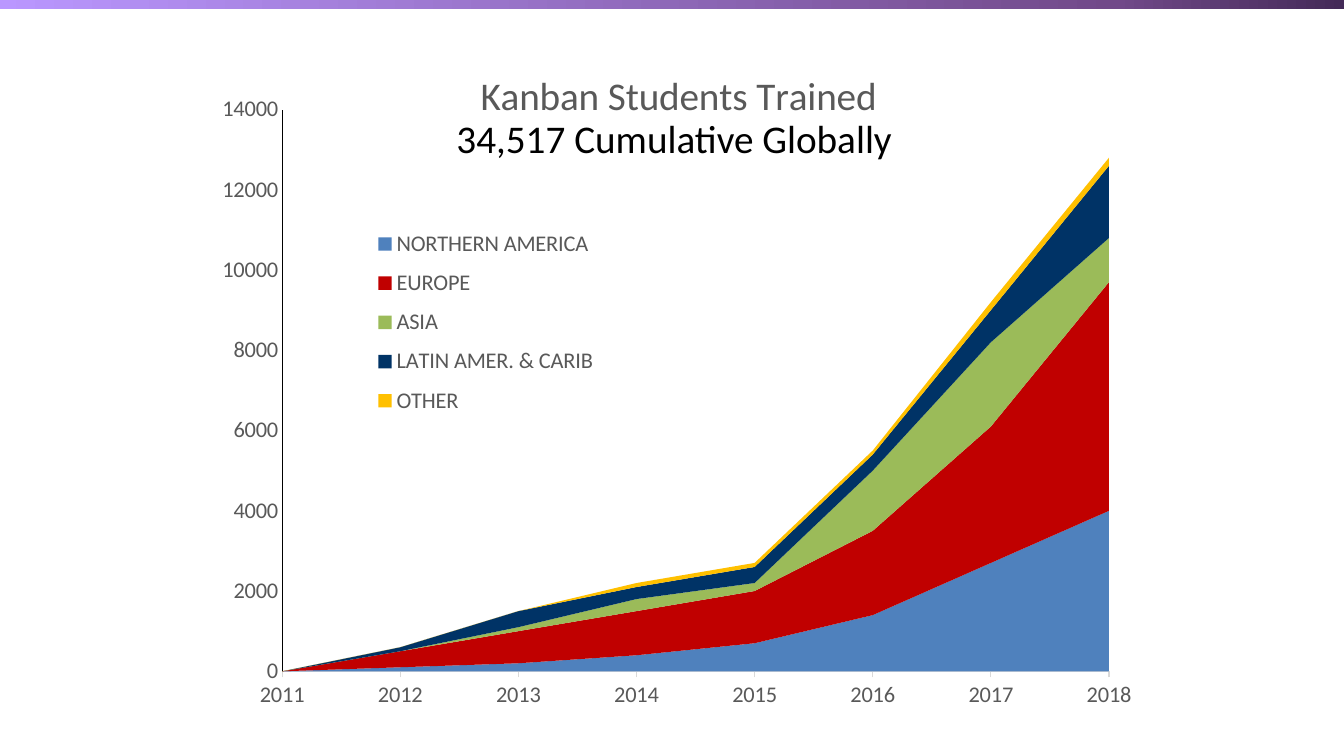
from copy import deepcopy
from dataclasses import dataclass

from lxml import etree
from pptx import Presentation
from pptx.chart.data import CategoryChartData
from pptx.dml.color import RGBColor
from pptx.enum import chart as chart_enum, shapes, text
from pptx.oxml import ns
from pptx.util import Pt

FONT = "Calibri"
GREY = "595959"
YEARS = [str(year) for year in range(2011, 2019)]


@dataclass
class Region:
    name: str
    color: str
    students: tuple[int, ...]


@dataclass
class BarStop:
    position: float
    color: str


REGIONS = [
    Region("NORTHERN AMERICA", "4F81BD", (0, 100, 200, 400, 700, 1400, 2700, 4000)),
    Region("EUROPE", "C00000", (0, 400, 800, 1100, 1300, 2100, 3400, 5700)),
    Region("ASIA", "9BBB59", (0, 0, 100, 300, 200, 1500, 2100, 1100)),
    Region("LATIN AMER. & CARIB", "003366", (0, 100, 400, 300, 400, 400, 800, 1800)),
    Region("OTHER", "FFC000", (0, 0, 0, 100, 100, 100, 200, 200)),
]
BAR_STOPS = [BarStop(0, "442A58"), BarStop(0.17, "714989"), BarStop(1, "BA97FF")]


def rgb(color: str) -> RGBColor:
    return RGBColor.from_string(color)


def style_font(font, size: float, color: str) -> None:
    font.name = FONT
    font.size = Pt(size)
    font.bold = False
    font.color.rgb = rgb(color)


def place_chart_part(element, index: int, **fractions) -> None:
    """Give a chart part a manual layout in fractions of the chart."""
    for old_layout in element.findall(ns.qn("c:layout")):
        element.remove(old_layout)
    layout = etree.Element(ns.qn("c:layout"))
    manual = etree.SubElement(layout, ns.qn("c:manualLayout"))
    for tag, value in fractions.items():
        etree.SubElement(manual, ns.qn(f"c:{tag}"), val=str(value))
    element.insert(index, layout)


def style_axis(axis, tick_mark, line_color: str) -> None:
    axis.has_major_gridlines = False
    axis.major_tick_mark = tick_mark
    axis.minor_tick_mark = chart_enum.XL_TICK_MARK.NONE
    axis.format.line.color.rgb = rgb(line_color)
    axis.format.line.width = Pt(0.75)
    style_font(axis.tick_labels.font, 16, GREY)


def add_top_bar(slide) -> None:
    bar = slide.shapes.add_shape(
        shapes.MSO_SHAPE.RECTANGLE, Pt(-2), Pt(-1.5), Pt(962), Pt(8))
    bar.shadow.inherit = False
    bar.line.fill.background()
    bar.fill.gradient()
    stop_list = bar._element.spPr.find(".//" + ns.qn("a:gsLst"))
    stop_list.append(deepcopy(stop_list[0]))
    for stop, wanted in zip(bar.fill.gradient_stops, BAR_STOPS):
        stop.position = wanted.position
        stop.color.rgb = rgb(wanted.color)
    bar.fill.gradient_angle = 180


def add_students_chart(slide) -> None:
    data = CategoryChartData()
    data.categories = YEARS
    for region in REGIONS:
        data.add_series(region.name, region.students)
    chart = slide.shapes.add_chart(
        chart_enum.XL_CHART_TYPE.AREA_STACKED,
        Pt(139.7), Pt(22.3), Pt(679.7), Pt(495.4), data).chart
    style_font(chart.font, 16, "000000")

    # Areas
    plot = chart.plots[0]
    plot.vary_by_categories = False
    for series, region in zip(plot.series, REGIONS):
        series.format.fill.solid()
        series.format.fill.fore_color.rgb = rgb(region.color)
        series.format.line.fill.background()
    place_chart_part(chart._chartSpace.chart.plotArea, 0, layoutTarget="inner",
                     xMode="edge", yMode="edge", x=0.091, y=0.113, w=0.869, h=0.81)

    # Axes
    style_axis(chart.category_axis, chart_enum.XL_TICK_MARK.OUTSIDE, "D9D9D9")
    value_axis = chart.value_axis
    style_axis(value_axis, chart_enum.XL_TICK_MARK.NONE, "000000")
    value_axis.minimum_scale = 0
    value_axis.maximum_scale = 14000
    value_axis.major_unit = 2000
    value_axis._element.find(ns.qn("c:crossBetween")).set("val", "midCat")

    # Title
    chart.has_title = True
    title = chart.chart_title
    title.text_frame.text = "Kanban Students Trained"
    style_font(title.text_frame.paragraphs[0].runs[0].font, 28, GREY)
    place_chart_part(title._element, 1, xMode="edge", yMode="edge", x=0.292, y=0.045)

    # Legend
    chart.has_legend = True
    legend = chart.legend
    legend.position = chart_enum.XL_LEGEND_POSITION.BOTTOM
    legend.include_in_layout = True
    style_font(legend.font, 16, GREY)
    place_chart_part(legend._element, 1, xMode="edge", yMode="edge",
                     x=0.18, y=0.27, w=0.25, h=0.3)


def add_total(slide) -> None:
    box = slide.shapes.add_textbox(Pt(319), Pt(77.8), Pt(384.5), Pt(41))
    box.text_frame.word_wrap = True
    box.text_frame.auto_size = text.MSO_AUTO_SIZE.SHAPE_TO_FIT_TEXT
    box.text_frame.text = "34,517 Cumulative Globally"
    style_font(box.text_frame.paragraphs[0].runs[0].font, 28, "000000")


def main() -> None:
    presentation = Presentation()
    presentation.slide_width = Pt(960)
    presentation.slide_height = Pt(540)
    slide = presentation.slides.add_slide(presentation.slide_layouts[6])
    add_top_bar(slide)
    add_students_chart(slide)
    add_total(slide)
    presentation.save("out.pptx")


if __name__ == "__main__":
    main()
